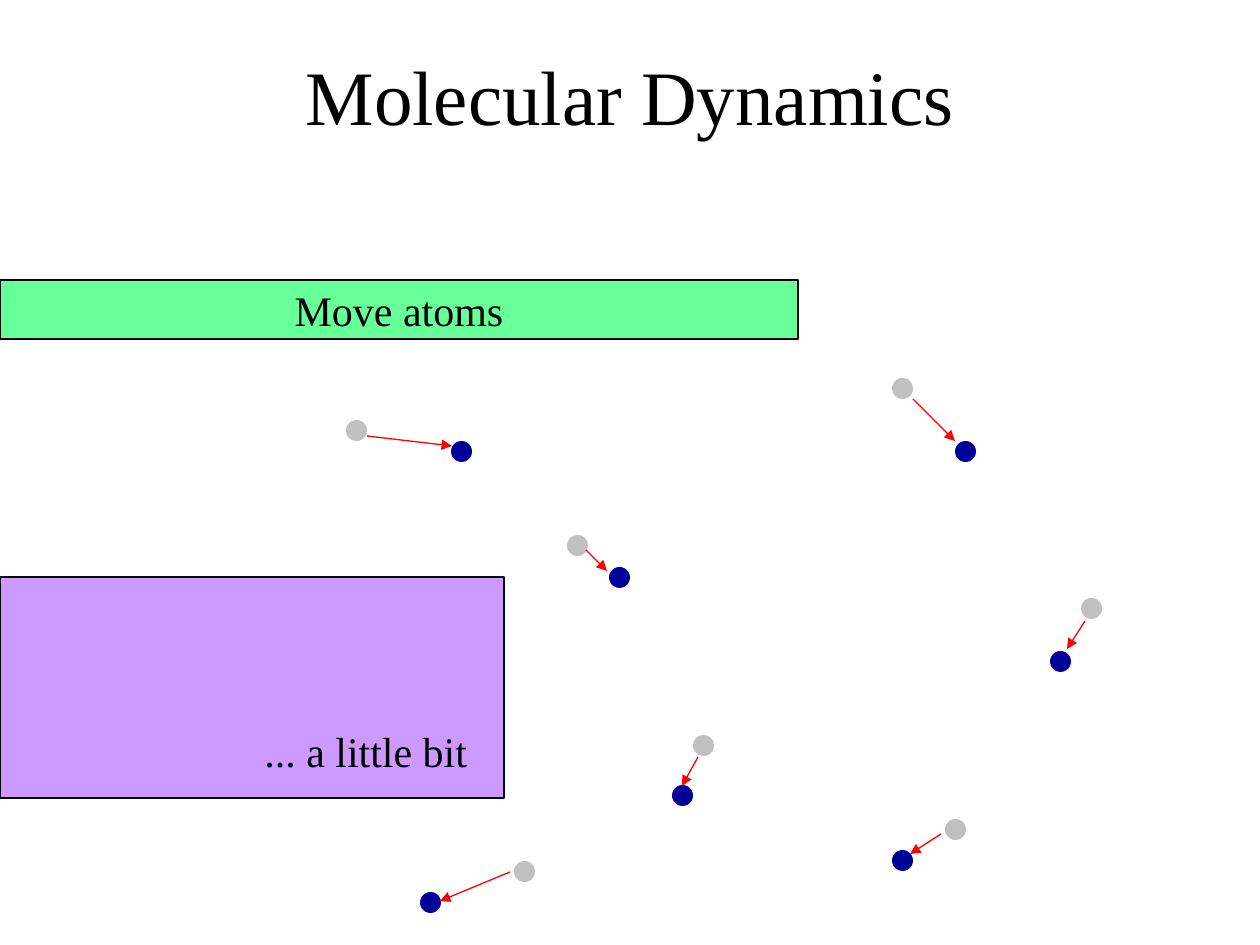
"""Build the Molecular Dynamics slide: atoms moving a little bit along red arrows."""
from lxml.etree import SubElement
from pptx import Presentation
from pptx.dml.color import RGBColor
from pptx.enum.shapes import MSO_CONNECTOR, MSO_SHAPE
from pptx.enum.text import MSO_ANCHOR, PP_ALIGN
from pptx.oxml.ns import qn
from pptx.util import Emu, Pt

SCALE = 914400 / 126
ATOM = 21


def paint(target, color):
    if hasattr(target, "solid"):
        target.solid()
        target.fore_color.rgb = RGBColor.from_string(color)
    else:
        target.rgb = RGBColor.from_string(color)


def add_box(parent, kind, left, top, width, height, fill=None, line=None):
    place = [Emu(round(value * SCALE)) for value in (left, top, width, height)]
    if kind is None:
        return parent.shapes.add_textbox(*place)
    box = parent.shapes.add_shape(kind, *place)
    box.shadow.inherit = False
    paint(box.fill, fill)
    if line:
        paint(box.line.color, line)
        box.line.width = Pt(0.75)
    else:
        box.line.fill.background()
    return box


deck = Presentation()
deck.slide_width, deck.slide_height = Emu(round(1260 * SCALE)), Emu(round(945 * SCALE))
page = deck.slides.add_slide(deck.slide_layouts[6])

title = add_box(page, None, 0, 53, 1260, 84)
banner = add_box(page, MSO_SHAPE.RECTANGLE, 0, 280, 798, 59, "66FF99", "000000")

moves = [
    ((892, 378), (955, 441), (913, 399), (955, 441)),
    ((346, 420), (451, 441), (367, 436), (452, 446)),
    ((567, 535), (609, 567), (586, 550), (607, 571)),
    ((693, 735), (672, 785), (698, 757), (682, 786)),
    ((514, 861), (420, 892), (510, 872), (440, 901)),
    ((945, 819), (892, 850), (941, 834), (910, 854)),
    ((1081, 598), (1050, 651), (1085, 621), (1067, 649)),
]

old_atoms = page.shapes.add_group_shape()
for old, new, tail, head in moves:
    add_box(old_atoms, MSO_SHAPE.OVAL, *old, ATOM, ATOM, "C0C0C0")
for old, new, tail, head in moves:
    add_box(page, MSO_SHAPE.OVAL, *new, ATOM, ATOM, "000099")

arrows = page.shapes.add_group_shape()
for old, new, tail, head in moves:
    ends = [Emu(round(value * SCALE)) for value in tail + head]
    arrow = arrows.shapes.add_connector(MSO_CONNECTOR.STRAIGHT, *ends)
    paint(arrow.line.color, "FF0000")
    arrow.line.width = Pt(0.75)
    SubElement(arrow.line._get_or_add_ln(), qn("a:tailEnd"), type="triangle")
    SubElement(arrow._element.spPr, qn("a:effectLst"))

panel = page.shapes.add_group_shape()
add_box(panel, MSO_SHAPE.RECTANGLE, 0, 577, 504, 221, "CC99FF", "000000")
remark = add_box(panel, None, 252, 719, 252, 58)

labels = [
    (title, "Molecular Dynamics", 44, PP_ALIGN.CENTER, MSO_ANCHOR.MIDDLE),
    (banner, "Move atoms", 24, PP_ALIGN.CENTER, MSO_ANCHOR.MIDDLE),
    (remark, "... a little bit", 24, PP_ALIGN.LEFT, MSO_ANCHOR.TOP),
]
for box, words, size, align, anchor in labels:
    frame = box.text_frame
    frame.word_wrap = True
    frame.vertical_anchor = anchor
    para = frame.paragraphs[0]
    para.alignment = align
    span = para.add_run()
    span.text = words
    for name, value in {"name": "Times New Roman", "size": Pt(size)}.items():
        setattr(span.font, name, value)
    paint(span.font.color, "000000")

deck.save("out.pptx")
